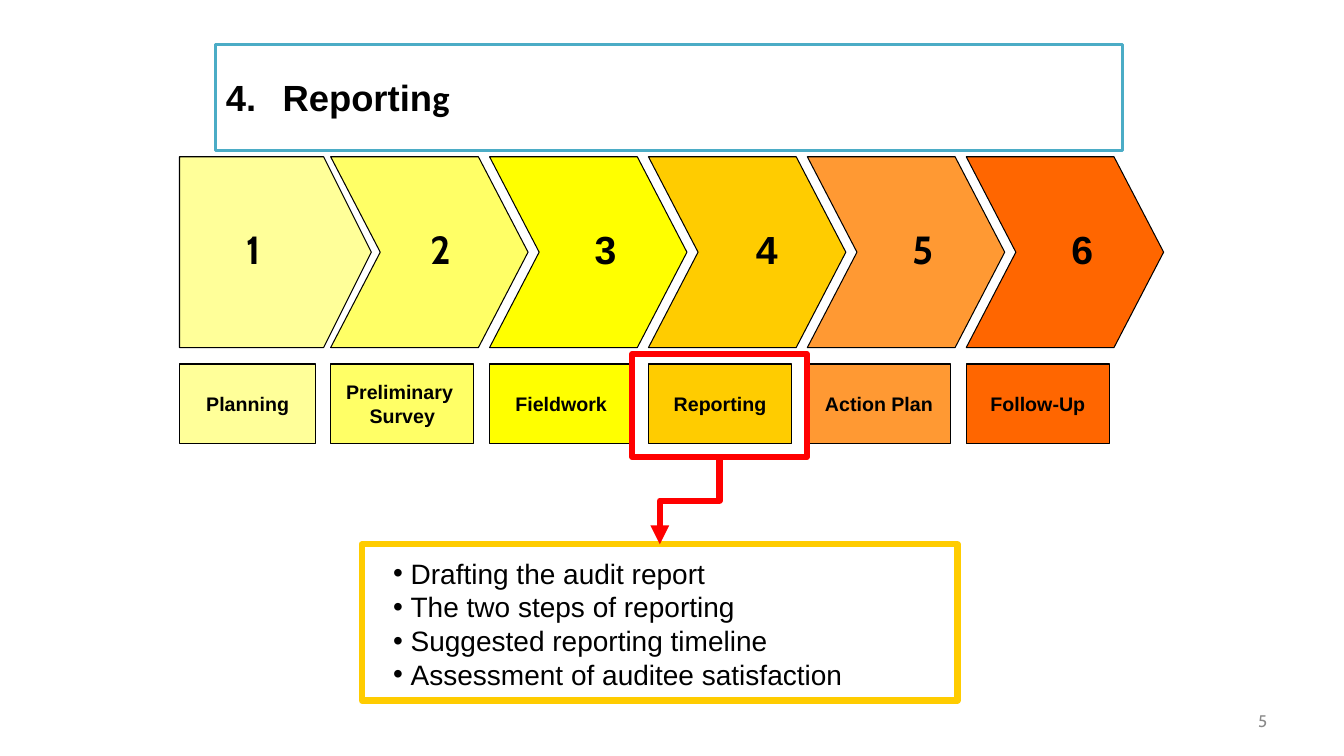
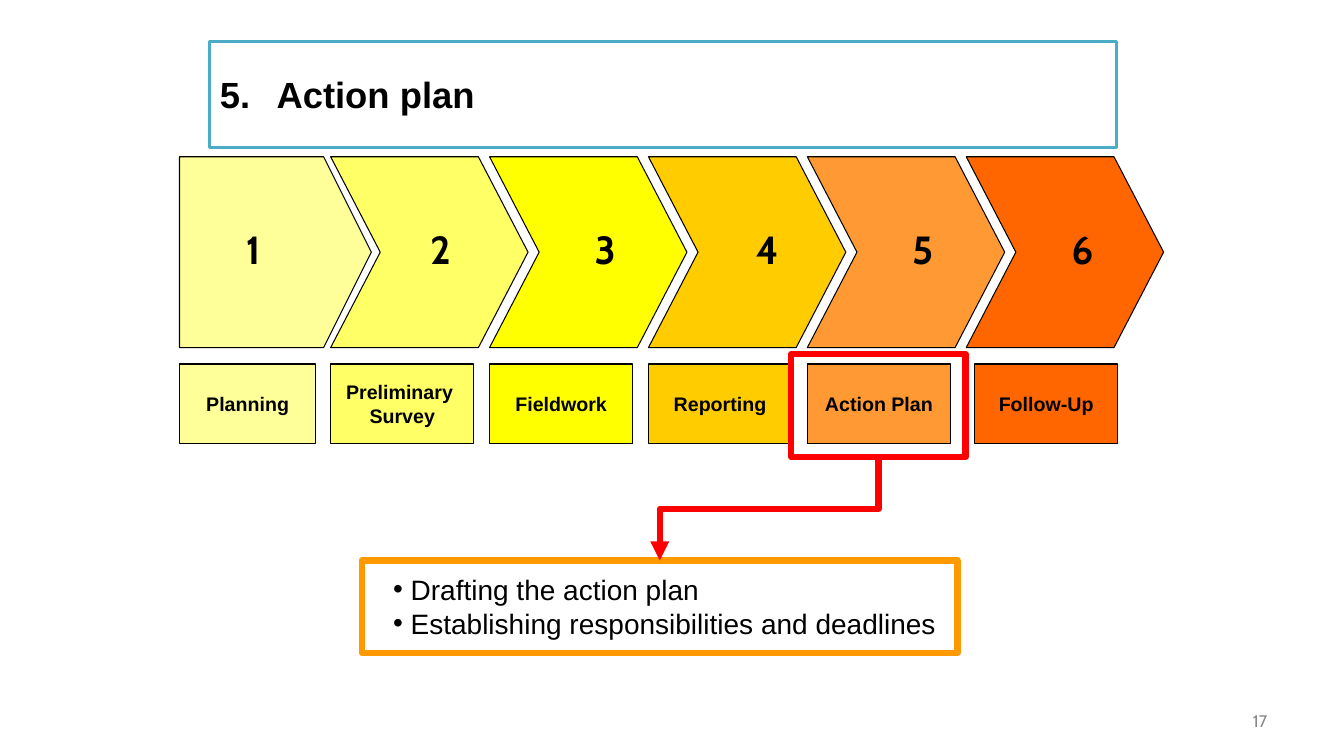
"""Build two audit process slides with a highlighted step."""
from lxml.etree import SubElement
from pptx import Presentation
from pptx.dml.color import RGBColor
from pptx.enum.shapes import MSO_CONNECTOR as CONN, MSO_SHAPE as SHAPE
from pptx.enum.text import MSO_ANCHOR as ANCHOR, MSO_AUTO_SIZE as AUTO, PP_ALIGN as ALIGN
from pptx.oxml.ns import qn
from pptx.util import Pt

STEPS = [
    ("Planning", "FFFF99", 168.5),
    ("Preliminary \nSurvey", "FFFF66", 300.2),
    ("Fieldwork", "FFFF00", 417.6),
    ("Reporting", "FFCC00", 532.8),
    ("Action Plan", "FF9933", 644.4),
    ("Follow-Up", "FF6600", 758.2),
]
DIGIT_WIDTH = {"Arial": 30.2, "Cabin": 32.4}
SLIDES = [
    dict(step=4, number="5", title=[("Reportin", "Arial"), ("g", "Calibri")], title_at=(154.1, 31.7),
         digit_fonts=["Cabin", "Cabin", "Arial", "Arial", "Cabin", "Arial"], last_shift=0,
         list_top=388.8, list_height=111.6, list_color="FFCC00",
         items=["Drafting the audit report", "The two steps of reporting",
                "Suggested reporting timeline", "Assessment of auditee satisfaction"]),
    dict(step=5, number="17", title=[("Action plan", "Arial")], title_at=(149.8, 29.5),
         digit_fonts=["Cabin"] * 6, last_shift=6,
         list_top=400.3, list_height=66.2, list_color="FF9900",
         items=["Drafting the action plan", "Establishing responsibilities and deadlines"]),
]


def rgb(value):
    return RGBColor.from_string(value)


def apply(obj, values):
    for name, value in values.items():
        setattr(obj, name, value)


class Deck:
    """Hold the shared style and the current slide."""

    BLACK, RED, GREY, TEAL, WHITE = "000000", "FF0000", "898989", "4BACC6", "FFFFFF"
    FIRST, SECOND, PITCH = 128.2, 236.2, 113.5

    def __init__(self):
        self.prs = Presentation()
        apply(self.prs, dict(slide_width=Pt(960), slide_height=Pt(540)))

    def new_slide(self):
        self.s = self.prs.slides.add_slide(self.prs.slide_layouts[1])

    def step_left(self, i):
        return self.SECOND + (i - 1) * self.PITCH if i else self.FIRST

    def place(self, sp, left, top, width, height):
        apply(sp, dict(left=Pt(left), top=Pt(top), width=Pt(width), height=Pt(height)))

    def paint(self, sp, fill, line, weight):
        if fill:
            sp.fill.solid()
            sp.fill.fore_color.rgb = rgb(fill)
        else:
            sp.fill.background()
        sp.line.color.rgb = rgb(line)
        sp.line.width = Pt(weight)

    def run(self, p, text, size, font="Arial", color=BLACK, bold=False):
        r = p.add_run()
        r.text = text
        apply(r.font, dict(name=font, size=Pt(size), bold=bold))
        r.font.color.rgb = rgb(color)

    def bullet(self, p, indent, tag, **attrs):
        pPr = p._p.get_or_add_pPr()
        pPr.set("marL", str(Pt(indent)))
        pPr.set("indent", str(-Pt(indent)))
        SubElement(pPr, qn("a:buFont")).set("typeface", "Arial")
        SubElement(pPr, qn(tag), attrs)

    def shape(self, kind, box, fill, line=BLACK, weight=0.75):
        sp = self.s.shapes.add_shape(kind, *map(Pt, box))
        sp.shadow.inherit = False
        self.paint(sp, fill, line, weight)
        return sp

    def text(self, box, text, size, align=ALIGN.LEFT, wrap=False, anchor=ANCHOR.TOP, **font):
        tf = self.s.shapes.add_textbox(*map(Pt, box)).text_frame
        apply(tf, dict(word_wrap=wrap, vertical_anchor=anchor))
        p = tf.paragraphs[0]
        p.alignment = align
        self.run(p, text, size, **font)

    def title(self, runs, at, start):
        sp = self.s.shapes.title
        self.place(sp, *at, 648, 75.6)
        self.paint(sp, self.WHITE, self.TEAL, 2)
        tf = sp.text_frame
        apply(tf, dict(word_wrap=True, auto_size=AUTO.NONE, vertical_anchor=ANCHOR.MIDDLE))
        p = tf.paragraphs[0]
        p.alignment = ALIGN.LEFT
        self.bullet(p, 40.5, "a:buAutoNum", type="arabicPeriod", startAt=str(start))
        for text, font in runs:
            self.run(p, text, 26, font, bold=True)

    def arrow(self, i, color):
        kind, width, adj = (SHAPE.CHEVRON, 141, 0.26) if i else (SHAPE.PENTAGON, 137, 0.25)
        sp = self.shape(kind, (self.step_left(i), 112, width, 136.3), color)
        sp.adjustments[0] = adj

    def label(self, i, text, color, shift):
        box = self.step_left(i) + shift, 260, 102.3 if i else 97.5, 57
        tf = self.shape(SHAPE.RECTANGLE, box, color).text_frame
        apply(tf, dict(word_wrap=False, vertical_anchor=ANCHOR.MIDDLE))
        for n, line in enumerate(text.split("\n")):
            p = tf.add_paragraph() if n else tf.paragraphs[0]
            p.alignment = ALIGN.CENTER
            self.run(p, line, 14, bold=True)

    def process(self, fonts, last_shift):
        for i, (name, color, digit_left) in enumerate(STEPS):
            self.arrow(i, color)
            self.label(i, name, color, last_shift if i == len(STEPS) - 1 else 0)
            self.text((digit_left, 157.7, DIGIT_WIDTH[fonts[i]], 41), str(i + 1), 28,
                      font=fonts[i], bold=True)

    def highlight(self, step):
        box = self.step_left(step - 1) - 11.5, 252.9, 124.6, 73.6
        return self.shape(SHAPE.RECTANGLE, box, None, self.RED, 4.5)

    def items(self, lines, top, height, color):
        sp = self.s.placeholders[1]
        self.place(sp, 258.5, top, 425.5, height)
        self.paint(sp, None, color, 4.5)
        tf = sp.text_frame
        apply(tf, dict(word_wrap=True, auto_size=AUTO.NONE, vertical_anchor=ANCHOR.TOP,
                       margin_left=Pt(22.3), margin_top=Pt(8.6)))
        for n, line in enumerate(lines):
            p = tf.add_paragraph() if n else tf.paragraphs[0]
            apply(p, dict(line_spacing=Pt(24), space_before=Pt(0), alignment=ALIGN.LEFT))
            self.bullet(p, 12.5, "a:buChar", char="•")
            self.run(p, line, 20)
        return sp

    def elbow(self, upper, lower):
        x1, y1 = upper.left + upper.width // 2, upper.top + upper.height
        x2, y2 = lower.left + lower.width // 2, lower.top
        cx, cy, dx, dy = (x1 + x2) // 2, (y1 + y2) // 2, (x1 - x2) // 2, (y2 - y1) // 2
        c = self.s.shapes.add_connector(CONN.ELBOW, cx - dy, cy - dx, cx + dy, cy + dx)
        c.line.color.rgb = rgb(self.RED)
        c.line.width = Pt(4.5)
        spPr = c._element.spPr
        spPr.find(qn("a:xfrm")).set("rot", "5400000")
        SubElement(spPr.find(qn("a:ln")), qn("a:tailEnd")).set("type", "triangle")
        SubElement(spPr, qn("a:effectLst"))

    def page_number(self, number):
        self.text((688.3, 500.4, 224, 28.8), number, 12, ALIGN.RIGHT, True, ANCHOR.MIDDLE,
                  font="Cabin", color=self.GREY)


def main():
    deck = Deck()
    for d in SLIDES:
        deck.new_slide()
        deck.title(d["title"], d["title_at"], d["step"])
        deck.process(d["digit_fonts"], d["last_shift"])
        frame = deck.highlight(d["step"])
        body = deck.items(d["items"], d["list_top"], d["list_height"], d["list_color"])
        deck.elbow(frame, body)
        deck.page_number(d["number"])
    deck.prs.save("out.pptx")


if __name__ == "__main__":
    main()
